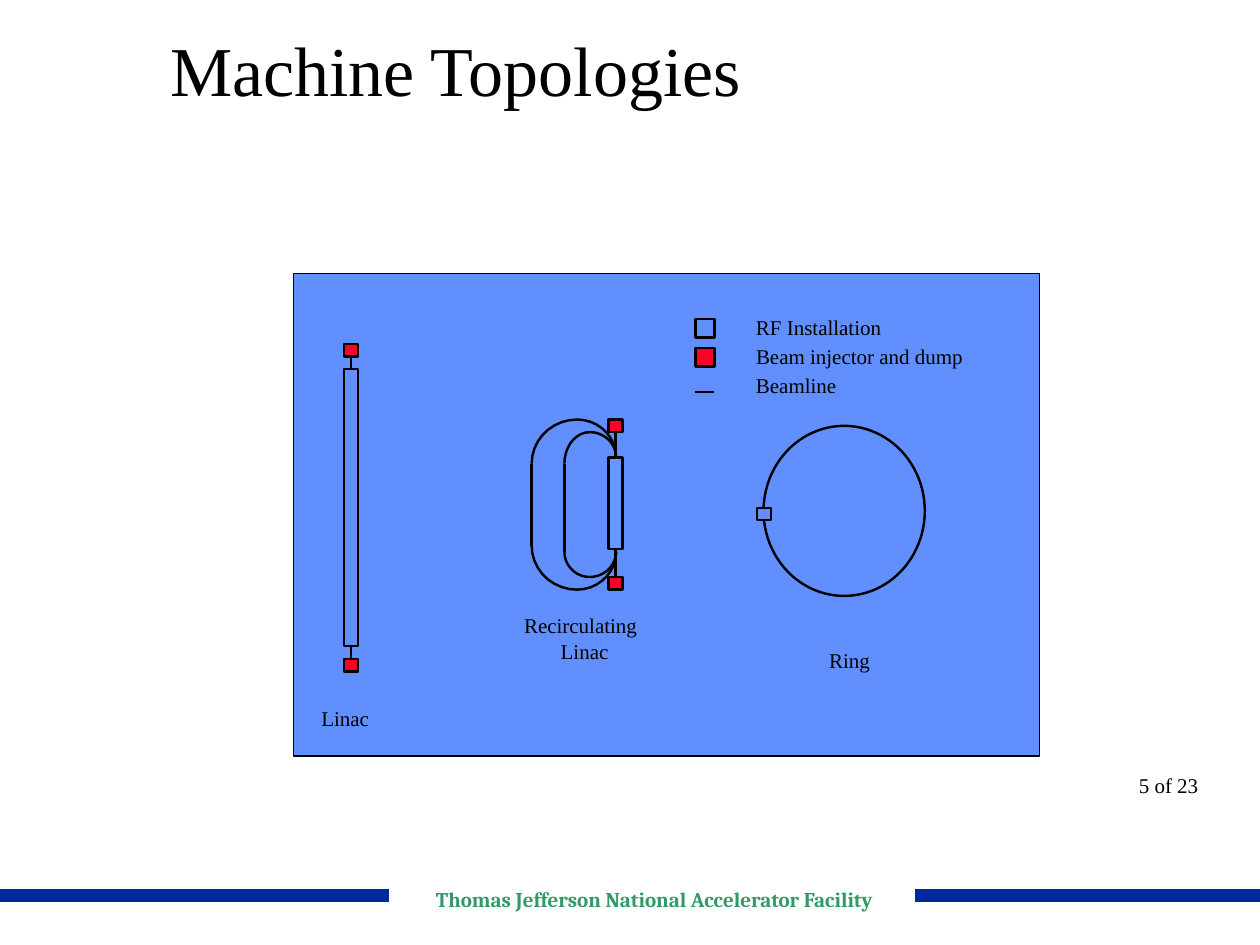
from math import cos, radians, sin

from lxml import etree
from pptx import Presentation
from pptx.dml.color import RGBColor
from pptx.enum.shapes import MSO_CONNECTOR, MSO_SHAPE
from pptx.enum.text import MSO_ANCHOR, MSO_AUTO_SIZE, PP_ALIGN
from pptx.oxml.ns import qn
from pptx.util import Inches, Pt

RECTANGLE, OVAL = MSO_SHAPE.RECTANGLE, MSO_SHAPE.OVAL
STRAIGHT = MSO_CONNECTOR.STRAIGHT
LEFT, CENTER = PP_ALIGN.LEFT, PP_ALIGN.CENTER
TOP, MIDDLE = MSO_ANCHOR.TOP, MSO_ANCHOR.MIDDLE
NO_AUTOFIT = MSO_AUTO_SIZE.NONE

BLACK = RGBColor(0, 0, 0)
NAVY = RGBColor(0x00, 0x27, 0x9F)
GREEN = RGBColor(0x33, 0x99, 0x66)
PANEL_BLUE = RGBColor(0x61, 0x8F, 0xFD)
RF_BLUE = RGBColor(0x66, 0x99, 0xFF)
RED = RGBColor(0xFC, 0x01, 0x28)
SERIF = "Times New Roman"
BEAM_WIDTH = 1.38

deck = Presentation()
deck.slide_width, deck.slide_height = Inches(10), Inches(7.5)
COLUMN, ROW = deck.slide_width // 1000, deck.slide_height // 750
page = deck.slides.add_slide(deck.slide_layouts[5])


def place(left, top, width, height):
    return left * COLUMN, top * ROW, width * COLUMN, height * ROW


def write(box, text, size=12, font=SERIF, color=BLACK, bold=False,
          align=LEFT, anchor=TOP, inset=(0, 0), wrap=False):
    frame = box.text_frame
    frame.auto_size = NO_AUTOFIT
    frame.word_wrap = wrap
    frame.vertical_anchor = anchor
    frame.margin_left = frame.margin_right = inset[0] * COLUMN
    frame.margin_top = frame.margin_bottom = inset[1] * ROW
    para = frame.paragraphs[0]
    para.alignment = align
    span = para.add_run()
    span.text = text
    span.font.size = Pt(size)
    span.font.name = font
    span.font.color.rgb = color
    span.font.bold = bold


title = page.shapes.title
title.left, title.top, title.width, title.height = place(125, 25, 499, 58)
write(title, "Machine Topologies", size=40, anchor=MIDDLE, inset=(10, 5))

boxes = {}
for name, kind, spot, fill, width in [
    ("panel", RECTANGLE, (233, 217, 592, 383), PANEL_BLUE, 0.75),
    ("legend rf", RECTANGLE, (552, 253, 15, 15), None, BEAM_WIDTH),
    ("legend injector", RECTANGLE, (552, 276, 15, 15), RED, BEAM_WIDTH),
    ("linac rf", RECTANGLE, (273, 293, 11, 220), None, BEAM_WIDTH),
    ("linac dump", RECTANGLE, (273, 523, 11, 10), RED, BEAM_WIDTH),
    ("linac injector", RECTANGLE, (273, 273, 11, 10), RED, BEAM_WIDTH),
    ("ring beamline", OVAL, (606, 338, 128, 135), None, BEAM_WIDTH),
    ("ring rf", RECTANGLE, (601, 403, 11, 10), PANEL_BLUE, BEAM_WIDTH),
    ("loop injector", RECTANGLE, (483, 333, 11, 10), RED, BEAM_WIDTH),
    ("loop dump", RECTANGLE, (483, 458, 11, 10), RED, BEAM_WIDTH),
    ("loop rf", RECTANGLE, (483, 363, 11, 73), RF_BLUE, BEAM_WIDTH),
]:
    box = page.shapes.add_shape(kind, *place(*spot))
    box.shadow.inherit = False
    if fill is None:
        box.fill.background()
    else:
        box.fill.solid()
        box.fill.fore_color.rgb = fill
    box.line.color.rgb = BLACK
    box.line.width = Pt(width)
    boxes[name] = box

RIGHT, UPPER_RIGHT, UPPER_LEFT, LOWER_RIGHT = 489, 363, 368, 438
for left, middle, top, lower_left, bottom in [
    (422, 458, 333, 433, 468),
    (448, 468, 343, 438, 458),
]:
    quarters = [
        (UPPER_RIGHT, RIGHT - middle, UPPER_RIGHT - top),
        (UPPER_LEFT, middle - left, UPPER_LEFT - top),
        (lower_left, middle - left, bottom - lower_left),
        (LOWER_RIGHT, RIGHT - middle, bottom - LOWER_RIGHT),
    ]
    for turn, (center, across, down) in enumerate(quarters):
        points = [
            ((middle + across * cos(radians(angle))) * COLUMN,
             (center - down * sin(radians(angle))) * ROW)
            for angle in range(90 * turn, 90 * turn + 91, 10)
        ]
        builder = page.shapes.build_freeform(*points[0])
        builder.add_line_segments(points[1:], close=False)
        arc = builder.convert_to_shape()
        arc.shadow.inherit = False
        arc.fill.background()
        arc.line.color.rgb = BLACK
        arc.line.width = Pt(BEAM_WIDTH)

for start, end, color, width in [
    ((726, 711), (1000, 711), NAVY, 7.25),
    ((0, 711), (309, 711), NAVY, 7.25),
    ((552, 311), (567, 311), BLACK, BEAM_WIDTH),
    ((422, 433), (422, 368), BLACK, BEAM_WIDTH),
    ((448, 438), (448, 368), BLACK, BEAM_WIDTH),
    ("linac injector", "linac rf", BLACK, BEAM_WIDTH),
    ("linac rf", "linac dump", BLACK, BEAM_WIDTH),
    ("loop injector", "loop rf", BLACK, BEAM_WIDTH),
    ("loop rf", "loop dump", BLACK, BEAM_WIDTH),
]:
    if start in boxes:
        upper, lower = boxes[start], boxes[end]
        axis = upper.left + upper.width // 2
        line = page.shapes.add_connector(
            STRAIGHT, axis, upper.top + upper.height, axis, lower.top)
        line.begin_connect(upper, 2)
        line.end_connect(lower, 0)
    else:
        line = page.shapes.add_connector(STRAIGHT, *place(*start, *end))
    line.line.color.rgb = color
    line.line.width = Pt(width)
    etree.SubElement(line._element.spPr, qn("a:effectLst"))

for text, spot, style in [
    ("RF Installation", (600, 250, 100, 20), {}),
    ("Beam injector and dump", (600, 273, 165, 20), {}),
    ("Beamline", (600, 296, 64, 20), {}),
    ("Linac", (255, 560, 38, 20), {}),
    ("Recirculating", (416, 486, 90, 20), {}),
    ("Linac", (445, 507, 38, 20), {}),
    ("Ring", (658, 514, 32, 20), {}),
    ("5 of 23", (894, 608, 101, 30), {"inset": (10, 5), "wrap": True}),
    ("Thomas Jefferson National Accelerator Facility", (309, 704, 421, 23),
     {"font": "Cambria", "color": GREEN, "bold": True, "align": CENTER, "wrap": True}),
]:
    write(page.shapes.add_textbox(*place(*spot)), text, **style)

deck.save("out.pptx")
